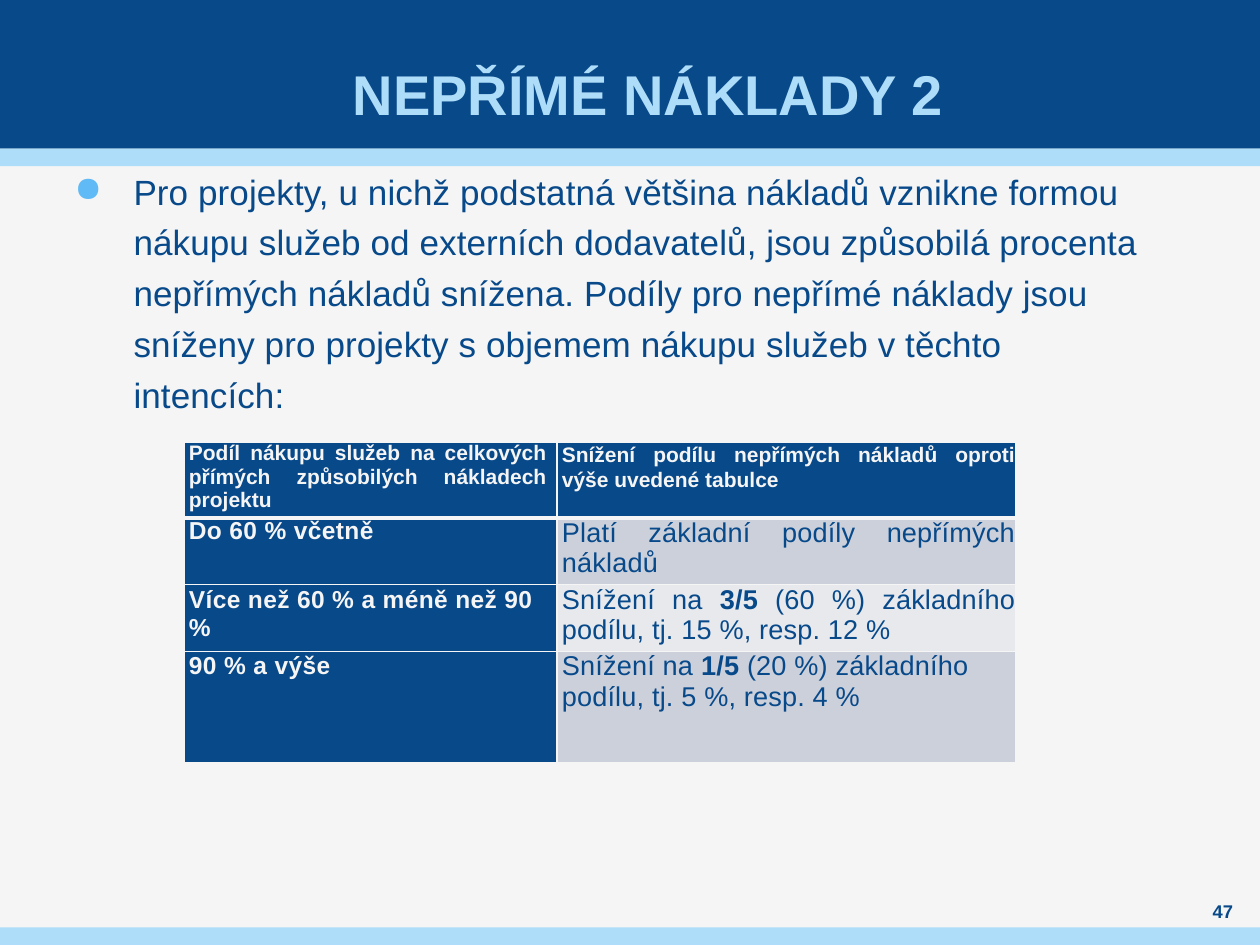
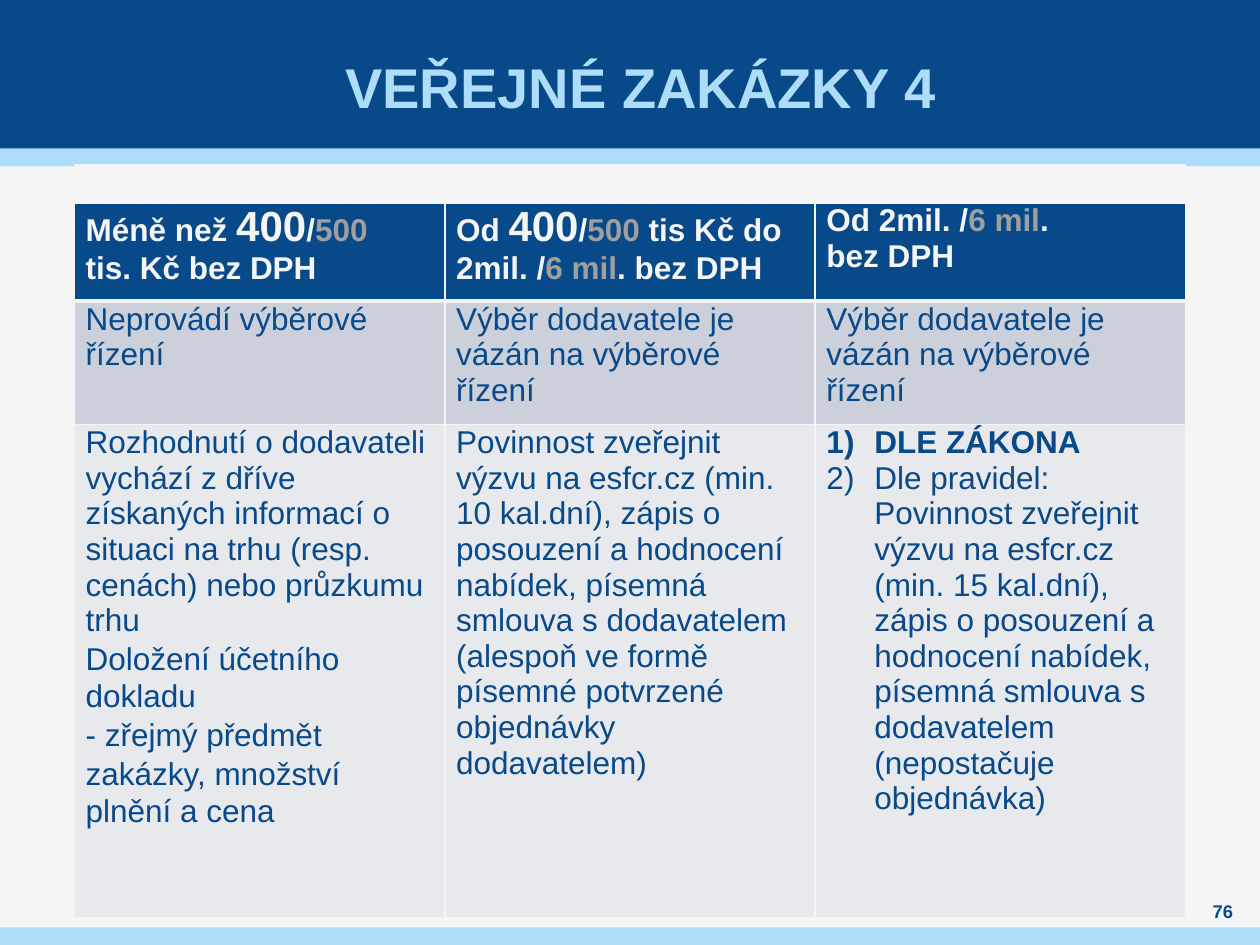
"""Builds two slides on indirect costs and public contracts."""
from lxml import etree
from pptx import Presentation
from pptx.dml.color import RGBColor
from pptx.enum.shapes import MSO_SHAPE
from pptx.enum.text import MSO_ANCHOR, PP_ALIGN
from pptx.oxml.ns import qn
from pptx.util import Inches, Pt

RECT = MSO_SHAPE.RECTANGLE
MIDDLE = MSO_ANCHOR.MIDDLE
LEFT, CENTER, JUSTIFY = PP_ALIGN.LEFT, PP_ALIGN.CENTER, PP_ALIGN.JUSTIFY

FONT = "Arial"
NAVY, SKY, PAPER = "08498A", "AEDDF9", "F5F5F5"
BULLET, GREY = "5FBAF5", "9F9F9F"
DARK_ROW, LIGHT_ROW = "CCD0DA", "E7E9ED"


def add_text(p, text, size=18, color=NAVY, bold=False, spc=0, align=LEFT,
             ls=None, before=0):
    """Fill a paragraph from a string or a list of (text, overrides)."""
    p.alignment = align
    p.space_before = Pt(before)
    if ls:
        p.line_spacing = ls
    runs = [(text, {})] if isinstance(text, str) else text
    for words, own in runs:
        for i, line in enumerate(words.split("\n")):
            if i:
                p.add_line_break()
            if not line:
                continue
            r = p.add_run()
            r.text = line
            r.font.name = FONT
            r.font.size = Pt(own.get("size", size))
            r.font.bold = own.get("bold", bold)
            r.font.color.rgb = RGBColor.from_string(own.get("color", color))
            if spc:
                r.font._element.set("spc", str(int(spc * 100)))


def format_cell(cell, fill, left=0, right=0, top_line=1, bottom_line=1):
    """Set margins, borders and fill of a table cell."""
    cell.margin_left, cell.margin_right = Inches(left), Inches(right)
    cell.margin_top = cell.margin_bottom = 0
    tcPr = cell._tc.get_or_add_tcPr()
    for side, width in zip("LRTB", (1, 1, top_line, bottom_line)):
        ln = etree.SubElement(tcPr, qn(f"a:ln{side}"), w=str(Pt(width)))
        solid = etree.SubElement(ln, qn("a:solidFill"))
        etree.SubElement(solid, qn("a:srgbClr"), val=PAPER)
    cell.fill.solid()
    cell.fill.fore_color.rgb = RGBColor.from_string(fill)


prs = Presentation()
prs.slide_width, prs.slide_height = Inches(10), Inches(7.5)

slides = []
for title, left, top, number in [("NEPŘÍMÉ NÁKLADY 2", 2.8, 0.47, "47"),
                                 ("VEŘEJNÉ ZAKÁZKY 4", 2.74, 0.41, "76")]:
    s = prs.slides.add_slide(prs.slide_layouts[6])
    s.background.fill.solid()
    s.background.fill.fore_color.rgb = RGBColor.from_string(PAPER)
    for y, height, color in [(0, 1.18, NAVY), (1.18, 0.14, SKY), (7.36, 0.14, SKY)]:
        sp = s.shapes.add_shape(RECT, 0, Inches(y), Inches(10), Inches(height))
        sp.shadow.inherit = False
        sp.fill.solid()
        sp.fill.fore_color.rgb = RGBColor.from_string(color)
        sp.line.fill.background()
    for text, x, y, w, h, style in [
        (title, left, top, 5.6, 0.54, dict(size=32, color=SKY)),
        (number, 9.45, 7.13, 0.51, 0.2, dict(size=10.5, align=CENTER)),
    ]:
        tf = s.shapes.add_textbox(Inches(x), Inches(y), Inches(w), Inches(h)).text_frame
        tf.word_wrap = True
        tf.vertical_anchor = MIDDLE
        tf.margin_left = tf.margin_right = tf.margin_top = tf.margin_bottom = 0
        add_text(tf.paragraphs[0], text, bold=True, **style)
    slides.append(s)
costs, contracts = slides

tf = costs.shapes.add_textbox(Inches(0.58), Inches(1.28), Inches(8.55), Inches(2.05)).text_frame
tf.word_wrap = True
tf.margin_left = tf.margin_right = tf.margin_top = tf.margin_bottom = 0
p = tf.paragraphs[0]
pPr = p._p.get_or_add_pPr()
pPr.set("marL", str(Inches(0.48)))
pPr.set("indent", str(Inches(-0.47)))
etree.SubElement(etree.SubElement(pPr, qn("a:buClr")), qn("a:srgbClr"), val=BULLET)
etree.SubElement(pPr, qn("a:buChar"), char="●")
add_text(p, "Pro projekty, u nichž podstatná většina nákladů vznikne formou nákupu "
            "služeb od externích dodavatelů, jsou způsobilá procenta nepřímých nákladů "
            "snížena. Podíly pro nepřímé náklady jsou sníženy pro projekty s objemem "
            "nákupu služeb v těchto intencích:", size=20, spc=0.07, ls=1.21)

strong = dict(bold=True)
reductions = [
    ("Podíl nákupu služeb na celkových přímých způsobilých nákladech projektu",
     "Snížení podílu nepřímých nákladů oproti výše uvedené tabulce"),
    ("Do 60 % včetně", "Platí základní podíly nepřímých nákladů"),
    ("Více než 60 % a méně než 90 %",
     [("Snížení na ", {}), ("3/5", strong),
      (" (60 %) základního podílu, tj. 15 %, resp. 12 %", {})]),
    ("90 % a výše",
     [("Snížení na ", {}), ("1/5", strong),
      (" (20 %) základního podílu, tj. 5 %, resp. 4 %", {})]),
]
table = costs.shapes.add_table(4, 2, Inches(1.46), Inches(3.51), Inches(6.6), Inches(2.54)).table
table.horz_banding = False
for col, width in zip(table.columns, (2.96, 3.64)):
    col.width = Inches(width)
for row, height in zip(table.rows, (0.6, 0.53, 0.53, 0.88)):
    row.height = Inches(height)
row_fills = [NAVY, DARK_ROW, LIGHT_ROW, DARK_ROW]
for i, (share, reduction) in enumerate(reductions):
    lines = dict(top_line=3 if i == 1 else 1, bottom_line=1 if i else 3)
    format_cell(table.cell(i, 0), NAVY, 0.04, 0.08, **lines)
    format_cell(table.cell(i, 1), row_fills[i], 0.04, **lines)
    p, q = (table.cell(i, j).text_frame.paragraphs[0] for j in (0, 1))
    if i == 0:
        add_text(p, share, size=12, color=PAPER, bold=True, align=JUSTIFY, ls=0.99)
        add_text(q, reduction, size=12, color=PAPER, bold=True, align=JUSTIFY, ls=Pt(14.3))
    else:
        add_text(p, share, size=14, color=PAPER, bold=True, spc=0.2,
                 ls=Pt(15.3 if i == 1 else 16.4))
        add_text(q, reduction, size=15.5, spc=0.1, align=LEFT if i == 3 else JUSTIFY)

big, grey = dict(size=24), dict(color=GREY)
selection = "Výběr dodavatele je vázán na výběrové řízení"
rules = [
    [[], [], []],
    [
        [[("Méně než ", {}), ("400", big), ("/", {}), ("500", grey),
          ("\ntis. Kč bez DPH", {})]],
        [[("Od ", {}), ("400", big), ("/", {}), ("500", grey), (" tis Kč do 2mil. /", {}),
          ("6 mil", grey), (". bez DPH", {})]],
        [[("Od 2mil. /", {}), ("6 mil", grey), (".\nbez DPH", {})]],
    ],
    [["Neprovádí výběrové řízení"], [selection], [selection]],
    [
        ["Rozhodnutí o dodavateli vychází z dříve získaných informací o situaci na trhu "
         "(resp. cenách) nebo průzkumu trhu",
         "Doložení účetního dokladu", "- zřejmý předmět",
         "zakázky, množství plnění a cena"],
        ["Povinnost zveřejnit výzvu na esfcr.cz (min. 10 kal.dní), zápis o posouzení a "
         "hodnocení nabídek, písemná smlouva s dodavatelem (alespoň ve formě písemné "
         "potvrzené objednávky dodavatelem)"],
        [[("DLE ZÁKONA", strong)],
         "Dle pravidel: Povinnost zveřejnit výzvu na esfcr.cz (min. 15 kal.dní), zápis o "
         "posouzení a hodnocení nabídek, písemná smlouva s dodavatelem (nepostačuje "
         "objednávka)"],
    ],
]
table = contracts.shapes.add_table(4, 3, Inches(0.59), Inches(1.31), Inches(8.82), Inches(5.96)).table
table.horz_banding = False
for col in table.columns:
    col.width = Inches(2.94)
for row, height in zip(table.rows, (0.29, 0.78, 0.98, 3.91)):
    row.height = Inches(height)
row_fills = [PAPER, NAVY, DARK_ROW, LIGHT_ROW]
for i, cells in enumerate(rules):
    for j, paragraphs in enumerate(cells):
        cell = table.cell(i, j)
        format_cell(cell, row_fills[i], 0.09, 0.16 if j else 0.1,
                    top_line=3 if i == 2 else 1, bottom_line=3 if i == 1 else 1)
        tf = cell.text_frame
        for k, text in enumerate(paragraphs):
            p = tf.add_paragraph() if k else tf.paragraphs[0]
            if (i, j) == (3, 2):
                pPr = p._p.get_or_add_pPr()
                pPr.set("marL", str(Inches(0.38)))
                pPr.set("indent", str(Inches(-0.38)))
                etree.SubElement(pPr, qn("a:buFont"), typeface=FONT)
                etree.SubElement(pPr, qn("a:buAutoNum"), type="arabicParenR")
            closing = j == 0 and k > 0
            add_text(p, text, color=PAPER if i == 1 else NAVY, bold=i == 1,
                     ls=Pt(21.4) if closing else 1.01, before=0.7 if closing else 0)

prs.save("out.pptx")
